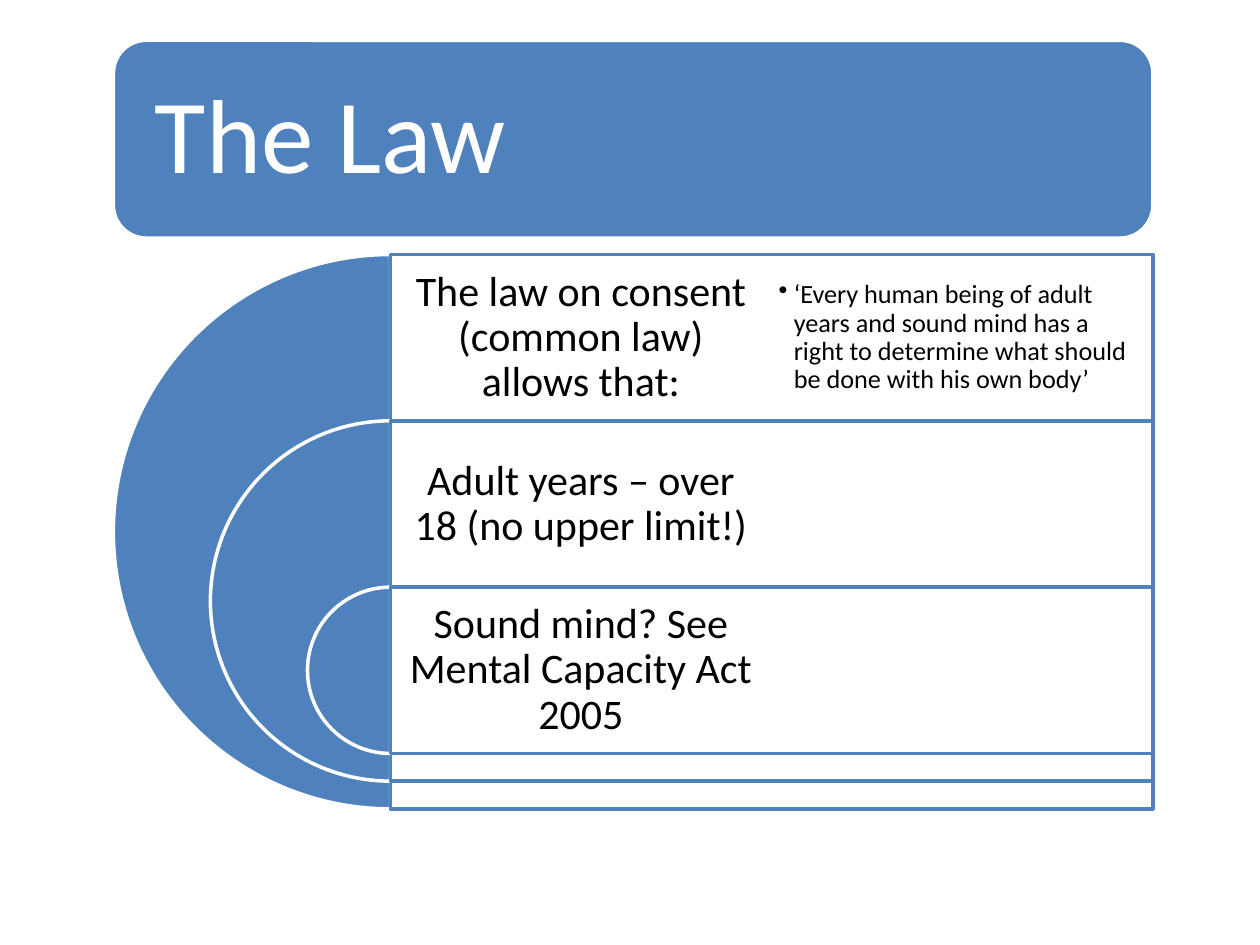
from dataclasses import dataclass

from lxml import etree
from pptx import Presentation
from pptx import util as u
from pptx.dml.color import RGBColor
from pptx.enum import shapes, text
from pptx.oxml.ns import qn

BLUE = RGBColor(0x4F, 0x81, 0xBD)
WHITE = RGBColor(0xFF, 0xFF, 0xFF)
BLACK = RGBColor(0, 0, 0)
KIND = shapes.MSO_SHAPE
ALIGN = text.PP_ALIGN

# Grid in inches: text rows, a spine through the half discs, two columns
SPINE, TOP, ROW, COL = 3.1, 2.02, 1.32, 3.02
WIDE = 6.05
DISC, SHRINK = 4.4, 1.54


@dataclass
class Box:
    x: float
    y: float
    w: float
    h: float

    def place(self) -> list:
        return [u.Inches(v) for v in (self.x, self.y, self.w, self.h)]


@dataclass
class Style:
    size: int
    color: RGBColor
    align: ALIGN
    inset: float


HEAD = Style(60, WHITE, ALIGN.LEFT, 0.25)
LABEL = Style(24, BLACK, ALIGN.CENTER, 0.1)
QUOTE = Style(15, BLACK, ALIGN.LEFT, 0.06)

ROWS = [
    "The law on consent (common law) allows that:",
    "Adult years – over 18 (no upper limit!)",
    "Sound mind? See Mental Capacity Act 2005",
]
SAYING = ("‘Every human being of adult years and sound mind has a right "
          "to determine what should be done with his own body’")


def draw(slide, kind: KIND, box: Box, fill: RGBColor, line: RGBColor):
    """Add a preset shape with a flat fill and a 2 pt outline."""
    shape = slide.shapes.add_shape(kind, *box.place())
    shape.shadow.inherit = False
    shape.fill.solid()
    shape.fill.fore_color.rgb = fill
    shape.line.color.rgb = line
    shape.line.width = u.Pt(2)
    return shape


def write(shape, words: str, style: Style):
    """Fill a text shape with one formatted paragraph."""
    frame = shape.text_frame
    pad = u.Inches(style.inset)
    look = {"word_wrap": True, "auto_size": text.MSO_AUTO_SIZE.NONE,
            "vertical_anchor": text.MSO_ANCHOR.MIDDLE,
            "margin_left": pad, "margin_right": pad,
            "margin_top": pad, "margin_bottom": pad}
    for key, value in look.items():
        setattr(frame, key, value)
    para = frame.paragraphs[0]
    para.alignment, para.line_spacing = style.align, 0.9
    run = para.add_run()
    run.text = words
    for key, value in {"name": "Calibri", "size": u.Pt(style.size)}.items():
        setattr(run.font, key, value)
    run.font.color.rgb = style.color
    return para


def label(slide, box: Box, words: str, style: Style):
    return write(slide.shapes.add_textbox(*box.place()), words, style)


def bullet(para) -> None:
    props = para._p.get_or_add_pPr()
    props.set("marL", str(u.Inches(0.12)))
    props.set("indent", str(u.Inches(-0.12)))
    etree.SubElement(props, qn("a:buChar")).set("char", "•")


def layer(slide, row: int, words: str) -> None:
    """Draw a half disc, its panel and its label."""
    size = DISC - SHRINK * row
    y = TOP + ROW * row
    pie = draw(slide, KIND.PIE, Box(SPINE - size / 2, y, size, size),
               BLUE, WHITE)
    pie.adjustments[0], pie.adjustments[1] = 54, 162
    panel = draw(slide, KIND.RECTANGLE, Box(SPINE, y, WIDE, size),
                 WHITE, BLUE)
    tint = panel.fill._xPr.find(".//" + qn("a:srgbClr"))
    etree.SubElement(tint, qn("a:alpha")).set("val", "90000")
    label(slide, Box(SPINE, y, COL, ROW), words, LABEL)


def main() -> None:
    deck = Presentation()
    deck.slide_width, deck.slide_height = u.Inches(10), u.Inches(7.5)
    slide = deck.slides.add_slide(deck.slide_layouts[5])

    # Title on its banner
    draw(slide, KIND.ROUNDED_RECTANGLE, Box(0.9, 0.32, 8.25, 1.57),
         BLUE, WHITE)
    title = slide.shapes.title
    spot = Box(0.98, 0.4, 8.1, 1.42).place()
    for key, value in zip(("left", "top", "width", "height"), spot):
        setattr(title, key, value)
    write(title, "The Law", HEAD)
    slide.shapes._spTree.append(title._element)

    # Nested layers, then the quotation beside the first
    for row, words in enumerate(ROWS):
        layer(slide, row, words)
    bullet(label(slide, Box(SPINE + COL, TOP, COL, ROW), SAYING, QUOTE))

    deck.save("out.pptx")


if __name__ == "__main__":
    main()
